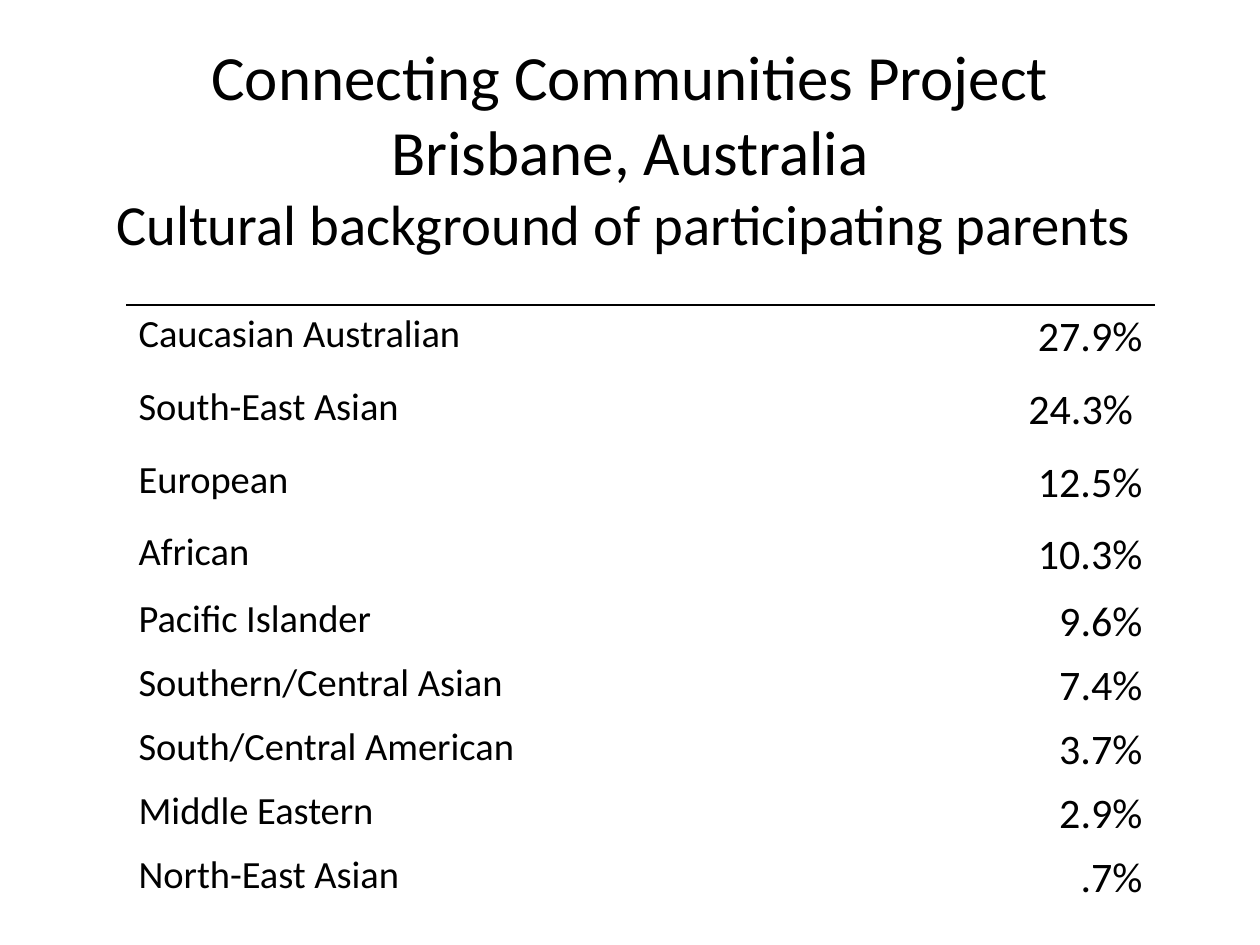
"""Builds a slide with a table of the cultural backgrounds of parents."""
from dataclasses import dataclass

from lxml import etree
from pptx import Presentation
from pptx import util as u
from pptx.dml.color import RGBColor
from pptx.enum import text
from pptx.oxml.ns import qn

SCALE = 914400 / 126
TITLE = ("Connecting Communities Project", "Brisbane, Australia",
         "Cultural background of participating parents ")
ROWS = (
    ("Caucasian Australian", "27.9%"),
    ("South-East Asian", "24.3% "),
    ("European", " 12.5%"),
    ("African", "10.3%"),
    ("Pacific Islander", "9.6%"),
    ("Southern/Central Asian", "7.4%"),
    ("South/Central American", " 3.7%"),
    ("Middle Eastern", "2.9%"),
    ("North-East Asian", ".7%"),
)
WIDTHS = (840, 189)
HEIGHTS = (73, 73, 72, 67) + (64,) * 5


@dataclass(frozen=True)
class Theme:
    font: str = "Calibri"
    ink: str = "000000"
    head: float = 36
    sub: float = 32.4
    label: float = 22
    value: float = 24
    rule: float = 1


THEME = Theme()


def px(n):
    return u.Emu(round(n * SCALE))


def style(run, size):
    run.font.name = THEME.font
    run.font.size = u.Pt(size)
    run.font.color.rgb = RGBColor.from_string(THEME.ink)


def add_title(slide, lines, x, y, w, h):
    frame = slide.shapes.add_textbox(px(x), px(y), px(w), px(h)).text_frame
    frame.word_wrap = True
    frame.vertical_anchor = text.MSO_ANCHOR.MIDDLE
    para = frame.paragraphs[0]
    para.text = "\v".join(lines)
    para.alignment = text.PP_ALIGN.CENTER
    for run, size in zip(para.runs, (THEME.head, THEME.head, THEME.sub)):
        style(run, size)


def set_edges(cell, top):
    props = cell._tc.get_or_add_tcPr()
    for side in "LRTB":
        edge = etree.SubElement(props, qn(f"a:ln{side}"))
        if side == "T" and top:
            edge.set("w", str(u.Pt(THEME.rule)))
            fill = etree.SubElement(edge, qn("a:solidFill"))
            etree.SubElement(fill, qn("a:srgbClr"), val=THEME.ink)
        else:
            edge.set("w", "0")
            etree.SubElement(edge, qn("a:noFill"))


def fill_cell(cell, words, size, align, top):
    cell.text_frame.text = words
    para = cell.text_frame.paragraphs[0]
    para.alignment = align
    style(para.runs[0], size)
    set_edges(cell, top)
    cell.fill.background()


def add_table(slide, rows, x, y):
    frame = slide.shapes.add_table(len(rows), len(WIDTHS), px(x), px(y),
                                   px(sum(WIDTHS)), px(sum(HEIGHTS)))
    table = frame.table
    table.first_row = table.horz_banding = False
    for col, width in zip(table.columns, WIDTHS):
        col.width = px(width)
    looks = ((THEME.label, text.PP_ALIGN.LEFT),
             (THEME.value, text.PP_ALIGN.RIGHT))
    for r, (row, height) in enumerate(zip(rows, HEIGHTS)):
        table.rows[r].height = px(height)
        for c, (words, (size, align)) in enumerate(zip(row, looks)):
            fill_cell(table.cell(r, c), words, size, align, r == 0)


def main():
    deck = Presentation()
    deck.slide_width, deck.slide_height = px(1260), px(945)
    slide = deck.slides.add_slide(deck.slide_layouts[6])
    add_title(slide, TITLE, 63, 21, 1134, 252)
    add_table(slide, ROWS, 126, 305)
    deck.save("out.pptx")


if __name__ == "__main__":
    main()
